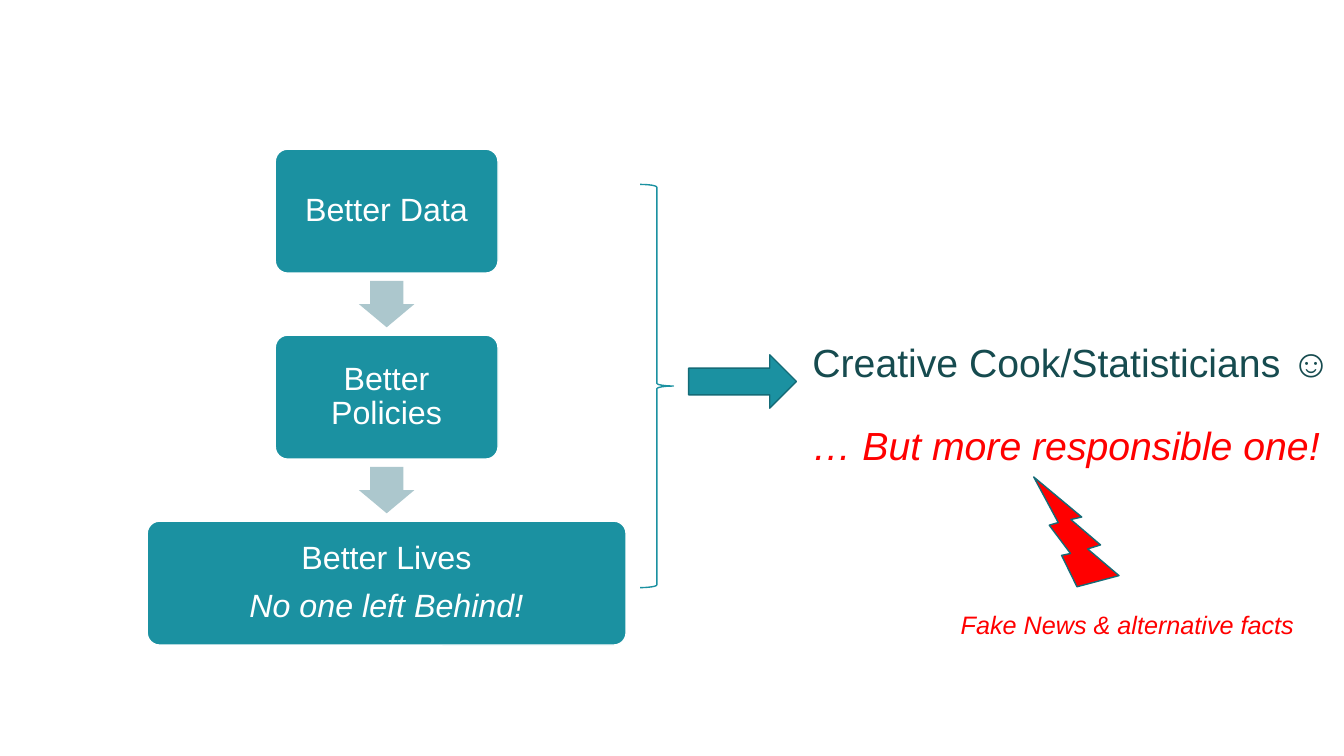
from pptx import Presentation
from pptx.dml.color import RGBColor
from pptx.enum.shapes import MSO_SHAPE as Shape
from pptx.enum.text import MSO_ANCHOR as Anchor, MSO_AUTO_SIZE as Fit, PP_ALIGN as Align
from pptx.util import Inches, Pt

TEAL = RGBColor(0x1B, 0x91, 0xA1)
EDGE = RGBColor(0x14, 0x6B, 0x77)
PALE = RGBColor(0xAC, 0xC7, 0xCD)
DARK = RGBColor(0x16, 0x4B, 0x4F)
RED = RGBColor(0xFF, 0x00, 0x00)
WHITE = RGBColor(0xFF, 0xFF, 0xFF)

# Lines of text: (wording, colour, italic)
STEPS = [  # width, lines
    (2.21, [("Better Data", WHITE, False)]),
    (2.21, [("Better Policies", WHITE, False)]),
    (4.75, [("Better Lives", WHITE, False), ("No one left Behind!", WHITE, True)]),
]
CLAIM = [("Creative Cook/Statisticians ☺", DARK, False),
         ("… But more responsible one!", RED, True)]
THREAT = [("Fake News & alternative facts", RED, True)]

MID, TOP, STEP, HIGH = 3.835, 1.48, 1.845, 1.23
ARROW_W, ARROW_H = 0.46, 0.55


def add_shape(kind, left, top, width, height, fill=None, line=None, turn=0):
    shape = slide.shapes.add_shape(
        kind, Inches(left), Inches(top), Inches(width), Inches(height))
    shape.shadow.inherit = False
    shape.rotation = turn
    if fill is None:
        shape.fill.background()
    else:
        shape.fill.solid()
        shape.fill.fore_color.rgb = fill
    if line is None:
        shape.line.fill.background()
    else:
        shape.line.color.rgb = line
        shape.line.width = Pt(1)
    return shape


def write(frame, lines, size, align, gap=0):
    """Fill a text frame, with gap points before each line but the first."""
    for i, (words, colour, italic) in enumerate(lines):
        para = frame.paragraphs[0] if i == 0 else frame.add_paragraph()
        para.alignment = align
        para.line_spacing = 0.9
        if i:
            para.space_before = Pt(gap)
        run = para.add_run()
        run.text = words
        font = run.font
        font.name, font.size, font.italic = "Arial", Pt(size), italic
        font.color.rgb = colour


def add_label(lines, left, top, width, height, size, gap=0):
    box = slide.shapes.add_textbox(
        Inches(left), Inches(top), Inches(width), Inches(height))
    frame = box.text_frame
    frame.word_wrap = False
    frame.auto_size = Fit.SHAPE_TO_FIT_TEXT
    write(frame, lines, size, Align.LEFT, gap)


deck = Presentation()
deck.slide_width, deck.slide_height = Inches(13.33), Inches(7.5)
slide = deck.slides.add_slide(deck.slide_layouts[6])

for i, (width, lines) in enumerate(STEPS):
    top = TOP + i * STEP
    if i:
        centre = top - (STEP - HIGH) / 2
        arrow = add_shape(Shape.RIGHT_ARROW, MID - ARROW_W / 2, centre - ARROW_H / 2,
                          ARROW_W, ARROW_H, PALE, turn=90)
        arrow.adjustments[0], arrow.adjustments[1] = 0.6, 0.5
    card = add_shape(Shape.ROUNDED_RECTANGLE, MID - width / 2, top, width, HIGH, TEAL, WHITE)
    card.adjustments[0] = 0.1
    frame = card.text_frame
    frame.word_wrap = True
    frame.vertical_anchor = Anchor.MIDDLE
    write(frame, lines, 23, Align.CENTER, 9)

add_shape(Shape.RIGHT_BRACE, 6.35, 1.83, 0.33, 4, line=TEAL)
add_shape(Shape.RIGHT_ARROW, 6.83, 3.52, 1.07, 0.53, TEAL, EDGE)
add_label(CLAIM, 7.96, 3.36, 5.57, 1.37, 28, 29)
add_shape(Shape.LIGHTNING_BOLT, 10.16, 4.81, 1, 1, RED, EDGE, 189.8)
add_label(THREAT, 9.43, 6.03, 3.61, 0.37, 18)

deck.save("out.pptx")
